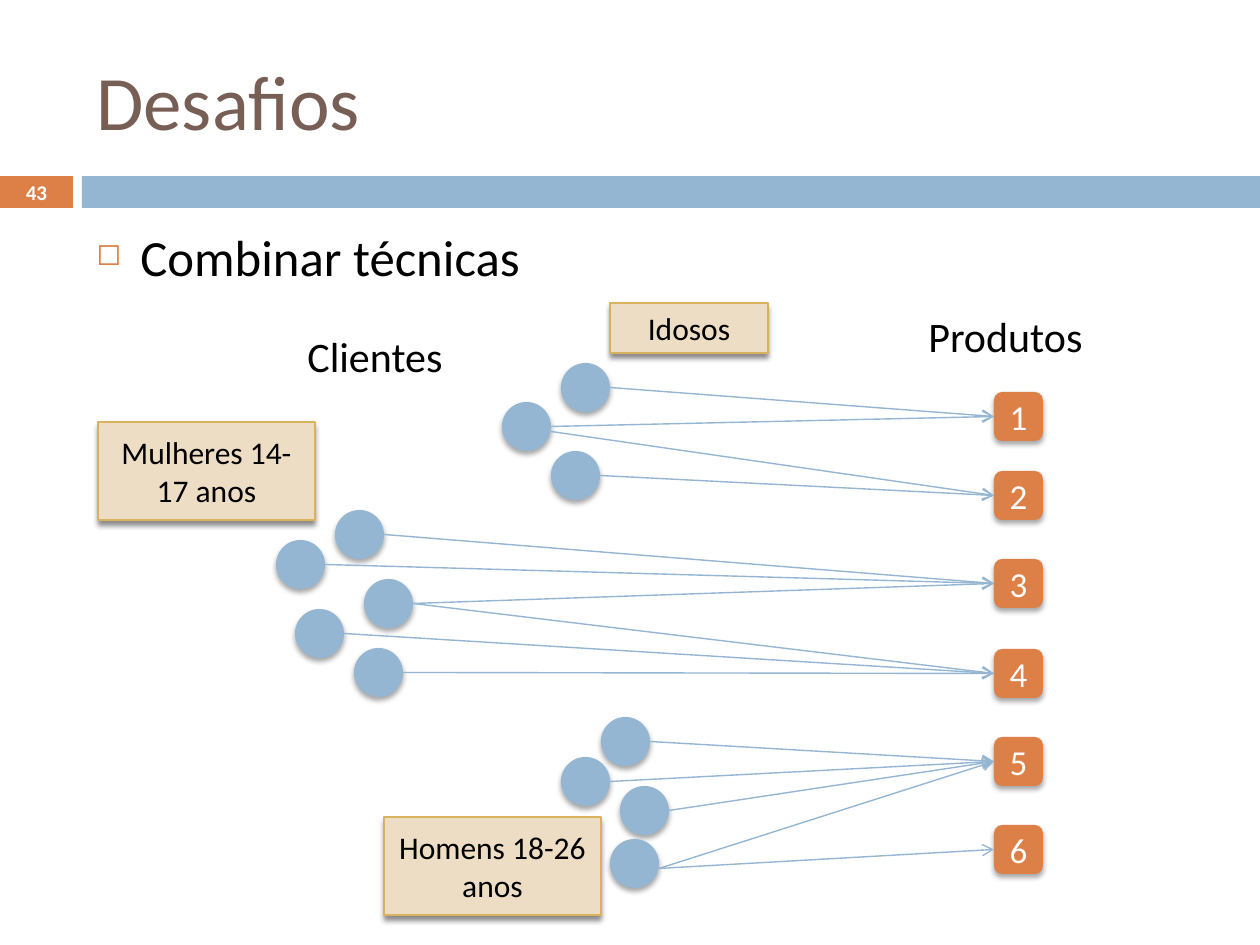
from lxml.etree import SubElement
from pptx import Presentation
from pptx.dml.color import RGBColor
from pptx.enum.shapes import MSO_CONNECTOR, MSO_SHAPE
from pptx.enum.text import MSO_ANCHOR as ANCHOR, PP_ALIGN as ALIGN
from pptx.oxml.ns import qn
from pptx.util import Emu, Pt

EMU_PER_PX = 914400 / 126
FONT = "Calibri"
BLUE = RGBColor(0x94, 0xB6, 0xD2)
ORANGE = RGBColor(0xDD, 0x80, 0x47)
BROWN = RGBColor(0x77, 0x5F, 0x55)
SAND = RGBColor(0xED, 0xDD, 0xC4)
GOLD = RGBColor(0xD8, 0xB2, 0x5C)
BLACK = RGBColor(0, 0, 0)
WHITE = RGBColor(0xFF, 0xFF, 0xFF)

NODE = 49
PRODUCT_LEFT = 994
PRODUCT_TOPS = [392, 471, 559, 649, 737, 825]
# left, top, and for each line: product number, drop below the circle's middle
CLIENTS = [
    (561, 363, [(1, 0)]),
    (502, 402, [(1, 0), (2, 5)]),
    (551, 451, [(2, 0)]),
    (335, 510, [(3, 0)]),
    (276, 540, [(3, 0)]),
    (364, 579, [(3, 0), (4, 0)]),
    (295, 609, [(4, 0)]),
    (354, 648, [(4, 0)]),
    (601, 717, [(5, 0)]),
    (561, 757, [(5, 0)]),
    (620, 786, [(5, 0)]),
    (610, 839, [(5, 5), (6, 5)]),
]
GROUPS = [
    ("Idosos", (610, 303, 158, 50)),
    ("Mulheres 14-17 anos", (98, 422, 217, 98)),
    ("Homens 18-26 anos", (384, 817, 217, 98)),
]


def px(n):
    return Emu(round(n * EMU_PER_PX))


def write(sp, text, size, color, align=ALIGN.LEFT, anchor=ANCHOR.TOP, bold=False):
    tf = sp.text_frame
    tf.word_wrap = True
    tf.vertical_anchor = anchor
    tf.text = text
    p = tf.paragraphs[0]
    p.alignment = align
    font = p.runs[0].font
    font.name, font.size, font.bold = FONT, Pt(size), bold
    font.color.rgb = color
    return p


def add_text(slide, box, text, size, color, **style):
    sp = slide.shapes.add_textbox(*map(px, box))
    return write(sp, text, size, color, **style)


def add_shape(slide, kind, box, fill, line=None):
    sp = slide.shapes.add_shape(kind, *map(px, box))
    sp.fill.solid()
    sp.fill.fore_color.rgb = fill
    if line is None:
        sp.line.fill.background()
    else:
        sp.line.color.rgb = line
        sp.line.width = Pt(0.79)
    sp.shadow.inherit = False
    return sp


def add_shadow(sp, opacity, distance):
    effects = sp._element.spPr.find(qn("a:effectLst"))
    shadow = SubElement(effects, qn("a:outerShdw"), blurRad=str(Pt(3)),
                        dist=str(Pt(distance)), dir="5400000", rotWithShape="0")
    color = SubElement(shadow, qn("a:srgbClr"), val=str(BLACK))
    SubElement(color, qn("a:alpha"), val=str(opacity * 1000))


def add_node(slide, kind, left, top, fill):
    sp = add_shape(slide, kind, (left, top, NODE, NODE), fill)
    add_shadow(sp, 35, 2)
    return sp


def add_arrow(slide, x1, y1, x2, y2):
    line = slide.shapes.add_connector(MSO_CONNECTOR.STRAIGHT, *map(px, (x1, y1, x2, y2)))
    line.line.color.rgb = BLUE
    line.line.width = Pt(0.79)
    SubElement(line.line._get_or_add_ln(), qn("a:tailEnd"), type="arrow")
    SubElement(line._element.spPr, qn("a:effectLst"))


def add_bullet(p, char, color, percent, indent):
    pPr = p._p.get_or_add_pPr()
    pPr.set("marL", str(px(indent)))
    pPr.set("indent", str(-px(indent)))
    SubElement(SubElement(pPr, qn("a:buClr")), qn("a:srgbClr"), val=str(color))
    SubElement(pPr, qn("a:buSzPct"), val=str(percent * 1000))
    SubElement(pPr, qn("a:buChar"), char=char)


def add_frame(slide):
    add_shape(slide, MSO_SHAPE.RECTANGLE, (0, 176, 73, 32), ORANGE)
    add_shape(slide, MSO_SHAPE.RECTANGLE, (82, 176, 1178, 32), BLUE)
    add_text(slide, (84, 32, 1124, 136), "Desafios", 44, BROWN, anchor=ANCHOR.MIDDLE)
    p = add_text(slide, (84, 220, 1124, 620), "Combinar técnicas", 29, BLACK)
    p.space_before = Pt(7)
    add_bullet(p, "◻", ORANGE, 60, 44)
    add_text(slide, (0, 175, 73, 34), "43", 12, WHITE,
             align=ALIGN.CENTER, anchor=ANCHOR.MIDDLE, bold=True)


def add_graph(slide):
    for left, top, _ in CLIENTS:
        add_node(slide, MSO_SHAPE.OVAL, left, top, BLUE)
    for number, top in enumerate(PRODUCT_TOPS, 1):
        sp = add_node(slide, MSO_SHAPE.ROUNDED_RECTANGLE, PRODUCT_LEFT, top, ORANGE)
        write(sp, str(number), 20, WHITE, ALIGN.CENTER, ANCHOR.MIDDLE)
    for left, top, links in CLIENTS:
        for number, drop in links:
            add_arrow(slide, left + NODE, top + NODE / 2 + drop,
                      PRODUCT_LEFT, PRODUCT_TOPS[number - 1] + NODE / 2)


def add_labels(slide):
    add_text(slide, (295, 324, 217, 64), "Clientes", 24, BLACK)
    add_text(slide, (916, 304, 227, 64), "Produtos", 24, BLACK)
    for text, box in GROUPS:
        sp = add_shape(slide, MSO_SHAPE.RECTANGLE, box, SAND, GOLD)
        add_shadow(sp, 45, 2.4)
        write(sp, text, 18, BLACK, ALIGN.CENTER, ANCHOR.MIDDLE)


def main():
    prs = Presentation()
    prs.slide_width, prs.slide_height = px(1260), px(945)
    slide = prs.slides.add_slide(prs.slide_layouts[6])
    add_frame(slide)
    add_graph(slide)
    add_labels(slide)
    prs.save("out.pptx")


if __name__ == "__main__":
    main()
